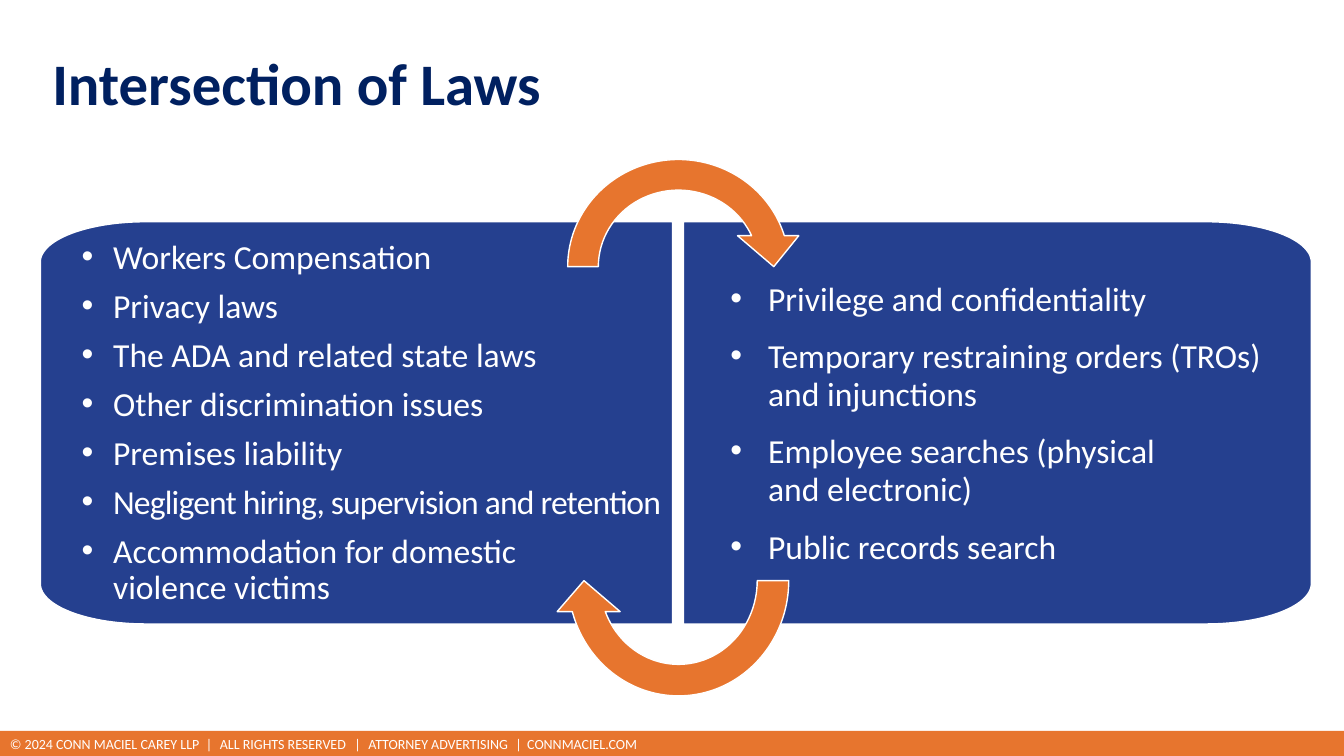
from math import cos, pi, sin

from lxml import etree
from pptx import Presentation
from pptx.dml.color import RGBColor
from pptx.enum.shapes import MSO_SHAPE as SHAPE
from pptx.enum.text import MSO_ANCHOR as ANCHOR, PP_ALIGN as ALIGN
from pptx.oxml.ns import qn
from pptx.util import Pt

NAVY, BLUE, ORANGE, WHITE = "002060", "25408F", "E7752E", "FFFFFF"
TITLE = "Intersection of Laws"
FOOTER = ["© 2024 CONN MACIEL CAREY LLP", "|", "ALL RIGHTS RESERVED", "|",
          "ATTORNEY ADVERTISING", "|", "CONNMACIEL.COM"]
FOOTER_TABS = [140, 150, 246, 256, 361, 369.5]

# A line is its text and its character spacing in points.
PANELS = [
    dict(outer=28.8, inner=480.4, insets=(11.5, 6.5), indent=(40.5, -22.5),
         leading=26, after=9,
         lines=[("Workers Compensation", 0),
                ("Privacy laws", 0),
                ("The ADA and related state laws", 0),
                ("Other discrimination issues", 0),
                ("Premises liability", 0),
                ("Negligent hiring, supervision and retention", -0.6),
                ("Accommodation for domestic \vviolence victims", 0)]),
    dict(outer=936.7, inner=488.2, insets=(6.5, 11.5), indent=(54, -27),
         leading=27, after=14,
         lines=[("Privilege and confidentiality", 0),
                ("Temporary restraining orders (TROs) and injunctions", 0),
                ("Employee searches (physical\vand electronic)", 0),
                ("Public records search", 0)]),
]
PANEL_TOP, PANEL_BOTTOM = 158.4, 445.7
CORNER_W, CORNER_H, CORNER_STEPS = 75, 28.8, 30

# left, top, width, height, rotation
ARROWS = [(394.6, 103, 180, 175, 0), (394.6, 321.1, 180, 187.2, 180)]
ARROW_ADJUSTMENTS = [0.125, 11.42319, 204.57681, 108, 0.125]


def color(value):
    return RGBColor.from_string(value)


def paint(sp, fill, line=None):
    sp.shadow.inherit = False
    sp.fill.solid()
    sp.fill.fore_color.rgb = color(fill)
    if line:
        sp.line.color.rgb = color(line)
        sp.line.width = Pt(1)
    else:
        sp.line.fill.background()


def write(p, text, size, fill=WHITE, bold=False, leading=None, after=0,
          indent=None, tabs=(), spacing=0):
    """Fill one paragraph; an indent also gives it a bullet."""
    pPr = p._p.get_or_add_pPr()
    if indent:
        pPr.set("marL", str(Pt(indent[0])))
        pPr.set("indent", str(Pt(indent[1])))
        etree.SubElement(pPr, qn("a:buFont"), typeface="Arial")
        etree.SubElement(pPr, qn("a:buChar"), char="•")
    if tabs:
        tab_list = etree.SubElement(pPr, qn("a:tabLst"))
        for stop in tabs:
            etree.SubElement(tab_list, qn("a:tab"), pos=str(Pt(stop)), algn="l")
    p.text = text
    p.alignment = ALIGN.LEFT
    p.line_spacing = leading
    p.space_before, p.space_after = Pt(0), Pt(after)
    for r in p.runs:
        r.font.name, r.font.size, r.font.bold = "Calibri", Pt(size), bold
        r.font.color.rgb = color(fill)
        if spacing:
            r.font._element.set("spc", str(round(spacing * 100)))


def add_panel(s, outer, inner, insets, indent, leading, after, lines):
    side = 1 if inner > outer else -1
    angles = [i * pi / 2 / CORNER_STEPS for i in range(CORNER_STEPS + 1)]
    corner = [(outer + side * CORNER_W * (1 - sin(a)), CORNER_H * (1 - cos(a)))
              for a in angles]
    outline = [(x, PANEL_TOP + dy) for x, dy in corner]
    outline += [(x, PANEL_BOTTOM - dy) for x, dy in reversed(corner)]
    outline.append((inner, PANEL_BOTTOM))
    builder = s.shapes.build_freeform(Pt(inner), Pt(PANEL_TOP))
    builder.add_line_segments([(Pt(x), Pt(y)) for x, y in outline], close=True)
    sp = builder.convert_to_shape()
    paint(sp, BLUE, WHITE)

    tf = sp.text_frame
    tf.word_wrap, tf.vertical_anchor = True, ANCHOR.MIDDLE
    tf.margin_left, tf.margin_right = map(Pt, insets)
    tf.margin_top = tf.margin_bottom = Pt(14.4)
    for i, (text, spacing) in enumerate(lines):
        p = tf.add_paragraph() if i else tf.paragraphs[0]
        write(p, text, 24, leading=Pt(leading), after=after,
              indent=indent, spacing=spacing)


def main():
    prs = Presentation()
    prs.slide_width, prs.slide_height = Pt(960), Pt(540)
    s = prs.slides.add_slide(prs.slide_layouts[5])

    title = s.shapes.title
    title.left, title.top, title.width, title.height = map(Pt, (30.2, 27.4, 864, 69))
    title.text_frame.vertical_anchor = ANCHOR.MIDDLE
    write(title.text_frame.paragraphs[0], TITLE, 42, NAVY, bold=True, leading=0.9)

    bar = s.shapes.add_shape(SHAPE.RECTANGLE, *map(Pt, (0, 522, 960, 19.4)))
    paint(bar, ORANGE)
    bar.text_frame.vertical_anchor = ANCHOR.MIDDLE
    write(bar.text_frame.paragraphs[0], "\t".join(FOOTER), 10,
          leading=Pt(12), tabs=FOOTER_TABS)

    for panel in PANELS:
        add_panel(s, **panel)

    for *box, rotation in ARROWS:
        arrow = s.shapes.add_shape(SHAPE.CIRCULAR_ARROW, *map(Pt, box))
        arrow.rotation = rotation
        for i, value in enumerate(ARROW_ADJUSTMENTS):
            arrow.adjustments[i] = value
        paint(arrow, ORANGE, WHITE)

    prs.save("out.pptx")


if __name__ == "__main__":
    main()
